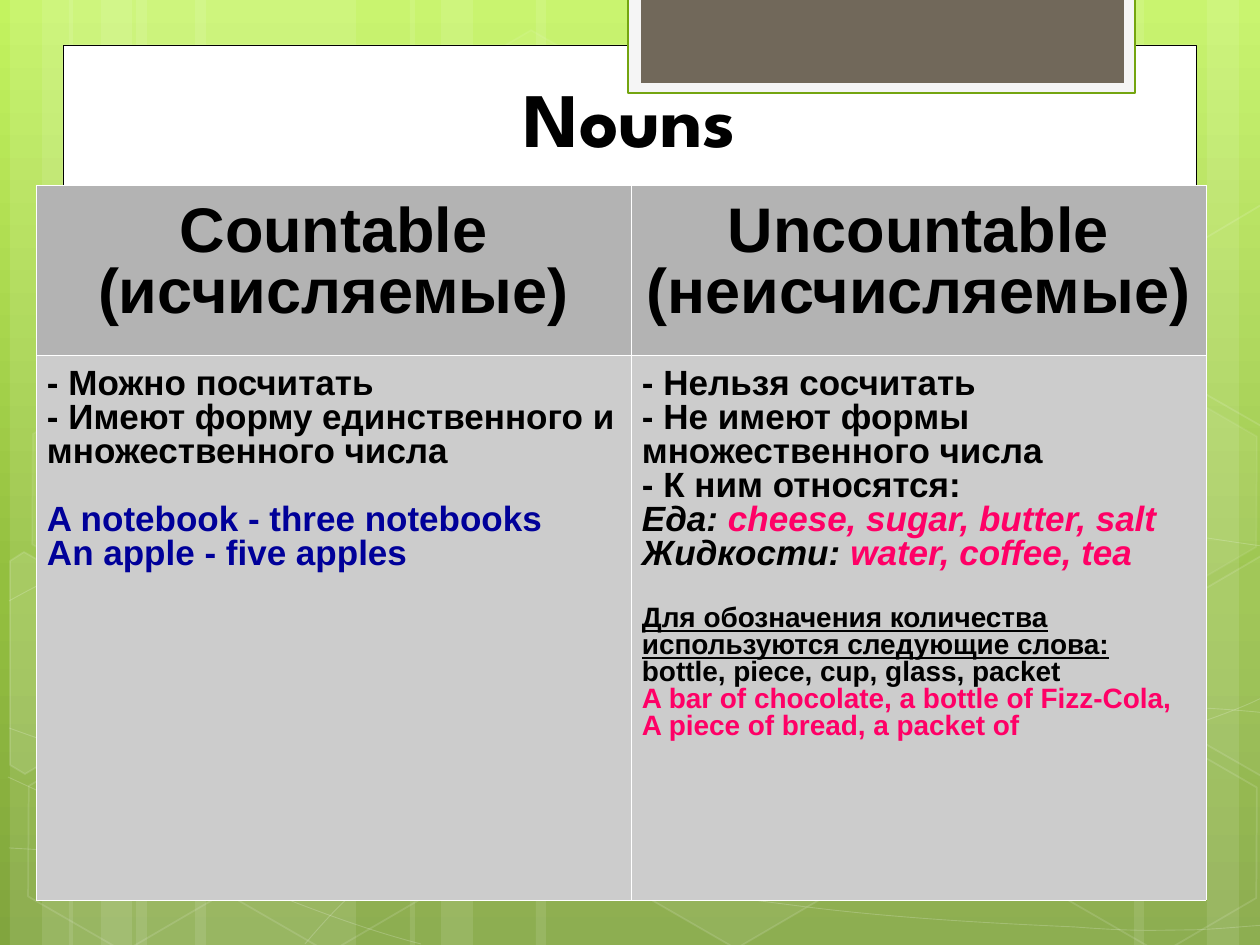
from copy import deepcopy
from typing import NamedTuple, Optional

from lxml.etree import SubElement
from pptx import Presentation
from pptx.dml.color import RGBColor
from pptx.enum.shapes import MSO_SHAPE as Shape
from pptx.enum.text import MSO_ANCHOR as Anchor, PP_ALIGN as Align
from pptx.oxml import parse_xml
from pptx.oxml.ns import nsdecls, qn
from pptx.util import Pt

EMU_PER_PX = 914400 / 126
WIDTH, HEIGHT = 1260, 945

WHITE = RGBColor(0xFF, 0xFF, 0xFF)
BLACK = RGBColor(0, 0, 0)
OFF_WHITE = RGBColor(0xF5, 0xF5, 0xF5)
GREEN = RGBColor(0x74, 0xA5, 0x10)
BROWN = RGBColor(0x71, 0x68, 0x5A)
HEADER_GREY = RGBColor(0xB3, 0xB3, 0xB3)
BODY_GREY = RGBColor(0xCC, 0xCC, 0xCC)
BLUE = RGBColor(0, 0, 0x99)
PINK = RGBColor(0xFF, 0, 0x66)
BACKDROP = [(0, RGBColor(0xC3, 0xF3, 0x5F)), (0.62, RGBColor(0x93, 0xBF, 0x3F)),
            (1, RGBColor(0x81, 0xA5, 0x3E))]


class Paint(NamedTuple):
    fill: Optional[RGBColor] = None
    fill_alpha: int = 100
    line: Optional[RGBColor] = None
    line_pt: float = 1
    line_alpha: int = 100


class Hexagon(NamedTuple):
    x: int
    y: int
    fill_alpha: int
    line_alpha: int


class Fragment(NamedTuple):
    """Hexagon cut off by the slide edge."""
    corners: list
    fill_alpha: int


class Run(NamedTuple):
    text: str
    color: RGBColor = BLACK
    italic: bool = False
    underline: bool = False


class Para(NamedTuple):
    runs: list
    size: int = 20
    before: float = 0


BANDS = [(136, 220), (10, 63), (42, 105), (195, 220), (69, 63), (101, 105), (924, 220),
         (1207, 63), (1134, 105), (536, 388), (410, 63), (441, 105)]

# Each curve is a start point followed by three points per Bezier segment.
CURVES = [
    [(9, 848), (77, 852), (145, 856), (239, 854), (334, 853), (451, 851), (577, 838),
     (703, 825), (882, 801), (998, 777), (1113, 753), (1231, 716), (1269, 694)],
    [(9, 601), (45, 581), (82, 562), (152, 543), (224, 524), (326, 496), (437, 488),
     (549, 479), (685, 478), (824, 488), (963, 498), (1193, 537), (1269, 547)],
    [(8, 777), (160, 847), (311, 916), (421, 944)],
    [(9, 728), (48, 742), (88, 756), (161, 776), (234, 795), (344, 827), (450, 848),
     (554, 869), (687, 892), (791, 905), (896, 919), (1008, 924), (1075, 927),
     (1140, 932), (1158, 930), (1191, 930), (1223, 929), (1246, 926), (1269, 925)],
    [(305, 944), (327, 918), (350, 893), (381, 871), (411, 848), (454, 823), (489, 805),
     (524, 788), (546, 780), (592, 767), (638, 755), (722, 737), (766, 728),
     (811, 719), (818, 719), (857, 717), (896, 713), (958, 709), (1000, 708),
     (1045, 707), (1116, 708), (1116, 708), (1144, 708), (1173, 708), (1201, 708),
     (1223, 709), (1245, 711), (1256, 712), (1264, 713), (1260, 712), (1268, 713)],
]
HEXAGONS = [Hexagon(421, 45, 4, 8), Hexagon(626, 742, 6, 12), Hexagon(14, 745, 0, 12),
            Hexagon(18, 393, 7, 8), Hexagon(219, 746, 0, 12), Hexagon(949, 571, 10, 12),
            Hexagon(1051, 747, 0, 12), Hexagon(1051, 396, 7, 8)]
FRAGMENTS = [
    Fragment([(10, 561), (24, 552), (121, 607), (120, 718), (25, 774), (10, 765)], 10),
    Fragment([(1167, 611), (1261, 556), (1271, 562), (1271, 772), (1263, 777), (1167, 722)], 4),
    Fragment([(1167, 261), (1261, 205), (1273, 212), (1271, 422), (1263, 427), (1167, 372)], 0),
]

HEADERS = [[Para([Run(word)], 36) for word in pair] for pair in (
    ("Countable", "(исчисляемые)"), ("Uncountable", "(неисчисляемые)"))]
COUNTABLE = [
    Para([Run("- Можно посчитать")]),
    Para([Run("- Имеют форму единственного и множественного числа")]),
    Para([Run("A notebook - three notebooks", BLUE)], before=19.5),
    Para([Run("An apple - five apples", BLUE)]),
]
UNCOUNTABLE = [
    Para([Run("- Нельзя сосчитать")]),
    Para([Run("- Не имеют формы множественного числа")]),
    Para([Run("- К ним относятся:")]),
    Para([Run("Еда: ", italic=True), Run("cheese, sugar, butter, salt", PINK, True)]),
    Para([Run("Жидкости: ", italic=True), Run("water, coffee, tea", PINK, True)]),
    Para([Run("Для обозначения количества используются следующие слова: ", underline=True),
          Run("bottle, piece, cup, glass, packet")], 16, 19.5),
    Para([Run("A bar of chocolate, a bottle of Fizz-Cola,", PINK)], 16),
    Para([Run("A piece of bread, a packet of", PINK)], 16),
]


def px(length: float) -> int:
    return round(length * EMU_PER_PX)


def set_alpha(color, percent: int) -> None:
    if percent < 100:
        SubElement(color, qn("a:alpha")).set("val", str(percent * 1000))


def apply_paint(shape, paint: Paint) -> None:
    shape.shadow.inherit = False
    properties = shape._element.spPr
    if paint.fill is not None and paint.fill_alpha:
        shape.fill.solid()
        shape.fill.fore_color.rgb = paint.fill
        set_alpha(properties.find(qn("a:solidFill"))[0], paint.fill_alpha)
    else:
        shape.fill.background()
    if paint.line is not None:
        shape.line.color.rgb = paint.line
        shape.line.width = Pt(paint.line_pt)
        set_alpha(properties.find(qn("a:ln")).find(qn("a:solidFill"))[0], paint.line_alpha)
    else:
        shape.line.fill.background()


def add_preset(slide, kind, x: int, y: int, w: int, h: int, paint: Paint):
    shape = slide.shapes.add_shape(kind, px(x), px(y), px(w), px(h))
    apply_paint(shape, paint)
    return shape


def add_outline(slide, points: list, paint: Paint, close: bool):
    builder = slide.shapes.build_freeform(*points[0], scale=EMU_PER_PX)
    builder.add_line_segments(points[1:], close=close)
    outline = builder.convert_to_shape()
    apply_paint(outline, paint)
    return outline


def add_curve(slide, points: list, paint: Paint) -> None:
    """Draw an outline through the points, then join each three into a Bezier segment."""
    curve = add_outline(slide, points, paint, close=False)
    segments = list(curve._element.iter(qn("a:lnTo")))
    for first in range(0, len(segments), 3):
        bezier = SubElement(segments[first].getparent(), qn("a:cubicBezTo"))
        for segment in segments[first:first + 3]:
            bezier.append(segment[0])
            segment.getparent().remove(segment)


def add_text(paragraph, text: str, *, size: int, font: str = "Arial", color=BLACK,
             italic: bool = False, underline: bool = False) -> None:
    run = paragraph.add_run()
    run.text = text
    style = run.font
    style.name, style.size, style.bold = font, Pt(size), True
    style.italic, style.underline = italic, underline
    style.color.rgb = color


def fill_cell(cell, paras: list, color: RGBColor, top: int, align) -> None:
    cell.fill.solid()
    cell.fill.fore_color.rgb = color
    cell.margin_left = cell.margin_right = px(11)
    cell.margin_top, cell.margin_bottom = px(top), px(6)
    for index, para in enumerate(paras):
        frame = cell.text_frame
        paragraph = frame.add_paragraph() if index else frame.paragraphs[0]
        paragraph.alignment, paragraph.line_spacing = align, 0.87
        paragraph.space_before = Pt(para.before)
        for run in para.runs:
            add_text(paragraph, run.text, size=para.size, color=run.color,
                     italic=run.italic, underline=run.underline)
    for index, side in enumerate("LRTB"):
        cell._tc.get_or_add_tcPr().insert(index, parse_xml(
            f'<a:ln{side} {nsdecls("a")} w="762"><a:solidFill>'
            f'<a:srgbClr val="{WHITE}"/></a:solidFill></a:ln{side}>'))


def paint_background(slide) -> None:
    fill = slide.background.fill
    fill.gradient()
    fill.gradient_angle = 270
    stops = slide._element.find(".//" + qn("a:gsLst"))
    stops.append(deepcopy(stops[0]))
    for stop, (position, color) in zip(fill.gradient_stops, BACKDROP):
        stop.position, stop.color.rgb = position, color


def add_decor(slide) -> None:
    for x, width in BANDS:
        add_preset(slide, Shape.RECTANGLE, x, 0, width, HEIGHT, Paint(WHITE, 10))
    for curve in CURVES:
        add_curve(slide, curve, Paint(line=WHITE, line_pt=0.5, line_alpha=20))
    for item in HEXAGONS:
        hexagon = add_preset(slide, Shape.HEXAGON, item.x, item.y, 220, 192,
                             Paint(WHITE, item.fill_alpha, WHITE, 1, item.line_alpha))
        hexagon.adjustments[0] = 0.285
        hexagon.rotation = 30
    for item in FRAGMENTS:
        add_outline(slide, item.corners, Paint(WHITE, item.fill_alpha, WHITE, 1, 12), True)
    add_preset(slide, Shape.RECTANGLE, 63, 45, 1134, 852, Paint(WHITE, line=BLACK, line_pt=0.5))
    add_preset(slide, Shape.RECTANGLE, 628, -3, 507, 96,
               Paint(OFF_WHITE, line=GREEN, line_pt=1.25))
    add_preset(slide, Shape.RECTANGLE, 641, -3, 483, 86, Paint(BROWN))


def place_title(slide) -> None:
    title = slide.shapes.title
    title.left, title.top, title.width, title.height = px(63), px(36), px(1134), px(156)
    frame = title.text_frame
    frame.vertical_anchor = Anchor.MIDDLE
    frame.margin_left = frame.margin_right = frame.margin_bottom = 0
    frame.margin_top = px(5)
    frame.paragraphs[0].alignment = Align.CENTER
    add_text(frame.paragraphs[0], "Nouns", size=44, font="League Spartan")
    slide.shapes._spTree.append(title._element)  # bring in front of the panel


def add_noun_table(slide) -> None:
    table = slide.shapes.add_table(2, 2, px(36), px(185), px(1170), px(715)).table
    table.first_row = table.horz_banding = False
    for column, width in zip(table.columns, (595, 575)):
        column.width = px(width)
    for row, height in zip(table.rows, (170, 545)):
        row.height = px(height)
    for column, (header, body) in enumerate(zip(HEADERS, (COUNTABLE, UNCOUNTABLE))):
        fill_cell(table.cell(0, column), header, HEADER_GREY, 18, Align.CENTER)
        fill_cell(table.cell(1, column), body, BODY_GREY, 13, Align.LEFT)


def main() -> None:
    deck = Presentation()
    deck.slide_width, deck.slide_height = px(WIDTH), px(HEIGHT)
    slide = deck.slides.add_slide(deck.slide_layouts[5])
    paint_background(slide)
    add_decor(slide)
    place_title(slide)
    add_noun_table(slide)
    deck.save("out.pptx")


if __name__ == "__main__":
    main()
